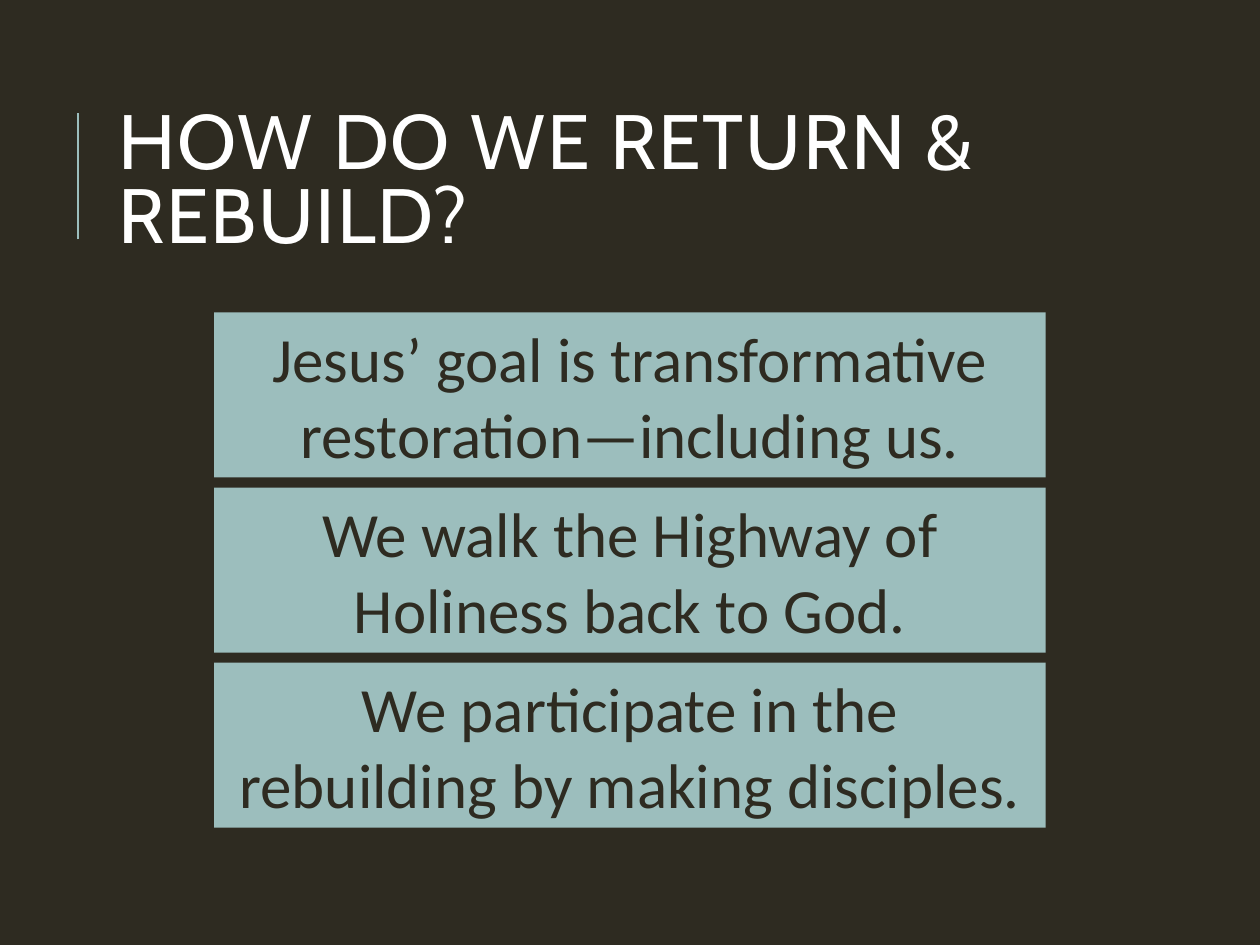
from lxml import etree
from pptx import Presentation
from pptx.dml.color import RGBColor
from pptx.enum.shapes import MSO_CONNECTOR as Connector, MSO_SHAPE as Shape
from pptx.enum.text import MSO_ANCHOR as Anchor, MSO_AUTO_SIZE as AutoSize, PP_ALIGN as Align
from pptx.oxml.ns import qn
from pptx.util import Inches, Pt


def color(hex_string):
    return RGBColor.from_string(hex_string)


class SlideBuilder:
    DARK, ACCENT, LIGHT = "2E2B21", "9CBEBD", "FFFFFF"
    HEADING_FONT, BODY_FONT = "Cabin", "Calibri"

    def __init__(self, page):
        self.page = page
        page.background.fill.solid()
        page.background.fill.fore_color.rgb = color(self.DARK)

    def set_text(self, shape, text, font, size, ink, align):
        frame = shape.text_frame
        frame.word_wrap = True
        frame.vertical_anchor = Anchor.MIDDLE
        para = frame.paragraphs[0]
        para.alignment = align
        para.font.name = font
        para.font.size = Pt(size)
        para.font.color.rgb = color(ink)
        span = para.add_run()
        span.text = text
        return para, span

    def title(self, text, left, top, width, height):
        box = self.page.shapes.add_textbox(
            Inches(left), Inches(top), Inches(width), Inches(height))
        para, span = self.set_text(box, text, self.HEADING_FONT, 44, self.LIGHT, Align.LEFT)
        para.line_spacing = 0.8
        # Letter spacing, in hundredths of a point
        span._r.get_or_add_rPr().set("spc", "100")

    def rule(self, x, start, end):
        line = self.page.shapes.add_connector(
            Connector.STRAIGHT, Inches(x), Inches(start), Inches(x), Inches(end))
        line.line.color.rgb = color(self.ACCENT)
        line.line.width = Pt(1.5)
        etree.SubElement(line._element.spPr, qn("a:effectLst"))

    def panel(self, text, left, top, width, height):
        box = self.page.shapes.add_shape(
            Shape.RECTANGLE, Inches(left), Inches(top), Inches(width), Inches(height))
        box.shadow.inherit = False
        box.fill.solid()
        box.fill.fore_color.rgb = color(self.ACCENT)
        box.line.fill.background()
        self.set_text(box, text, self.BODY_FONT, 36, self.DARK, Align.CENTER)
        box.text_frame.auto_size = AutoSize.SHAPE_TO_FIT_TEXT


def main():
    deck = Presentation()
    deck.slide_width, deck.slide_height = Inches(10), Inches(7.5)
    builder = SlideBuilder(deck.slides.add_slide(deck.slide_layouts[6]))

    # Heading with its accent rule
    builder.rule(0.62, 1.9, 0.9)
    builder.title("HOW DO WE RETURN & REBUILD?", 0.84, 0.64, 7.97, 1.64)

    # Stacked answers
    answers = [
        "Jesus’ goal is transformative restoration—including us.",
        "We walk the Highway of Holiness back to God.",
        "We participate in the rebuilding by making disciples.",
    ]
    first_top, height, gap = 2.48, 1.31, 0.08
    for index, answer in enumerate(answers):
        builder.panel(answer, 1.7, first_top + index * (height + gap), 6.6, height)

    deck.save("out.pptx")


if __name__ == "__main__":
    main()
